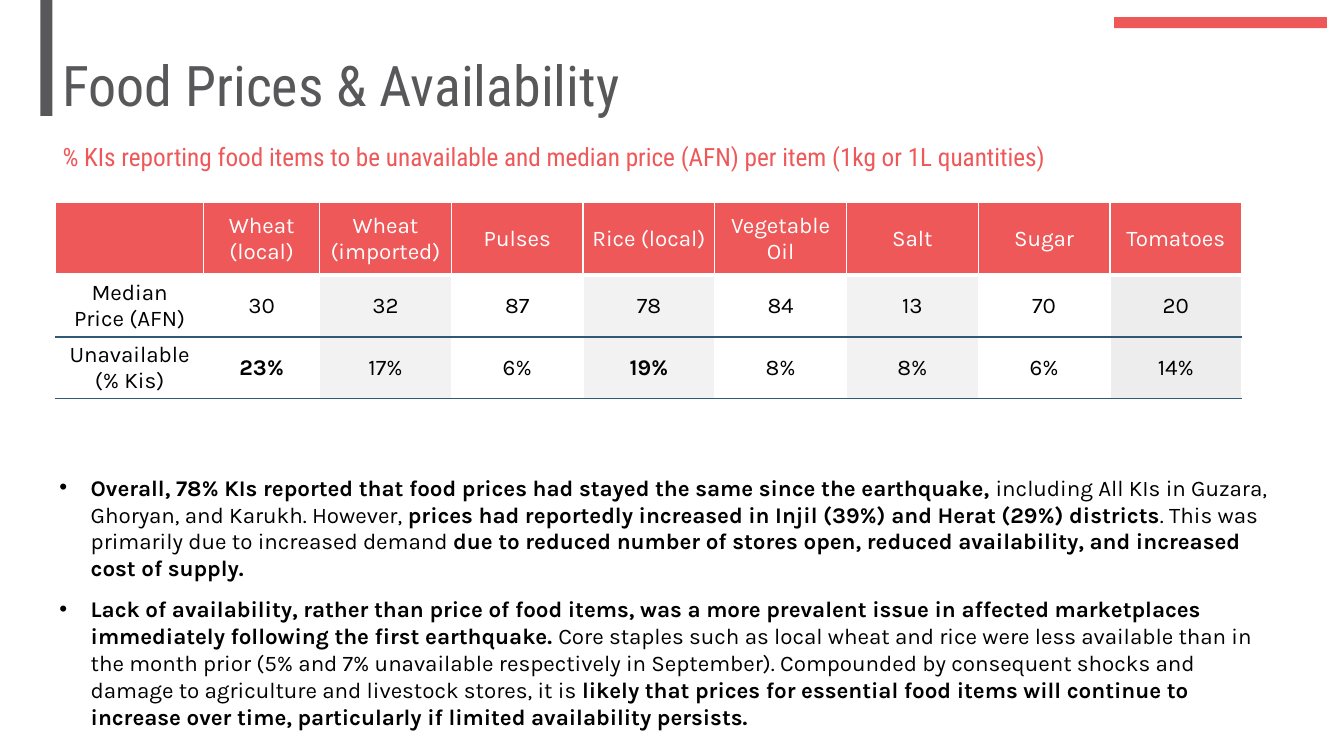
from dataclasses import dataclass

from lxml import etree
from pptx import Presentation
from pptx.dml.color import RGBColor
from pptx.enum.shapes import MSO_SHAPE
from pptx.enum.text import MSO_ANCHOR, PP_ALIGN
from pptx.oxml.ns import qn
from pptx.util import Inches, Pt

RECT = MSO_SHAPE.RECTANGLE
TOP, MIDDLE = MSO_ANCHOR.TOP, MSO_ANCHOR.MIDDLE
LEFT, CENTER = PP_ALIGN.LEFT, PP_ALIGN.CENTER

SLIDE_W, SLIDE_H = Inches(13.33), Inches(7.5)
COLORS = {"red": "EE5859", "gray": "58585A", "black": "000000", "white": "FFFFFF",
          "band": "F2F2F2", "last": "EDEDED", "rule": "315975"}
HEAD_FONT, BODY_FONT = "Roboto Condensed", "Karla"


def px(share: float) -> int:
    """Percent of the slide width."""
    return round(SLIDE_W * share / 100)


def py(share: float) -> int:
    """Percent of the slide height."""
    return round(SLIDE_H * share / 100)


@dataclass(frozen=True)
class Box:
    """Place and size in percent of the slide."""
    x: float
    y: float
    w: float
    h: float

    def emu(self) -> tuple[int, int, int, int]:
        return px(self.x), py(self.y), px(self.w), py(self.h)


@dataclass(frozen=True)
class Bar:
    box: Box
    color: str


@dataclass(frozen=True)
class Run:
    text: str
    bold: bool = False


@dataclass(frozen=True)
class Item:
    name: str
    price: str
    unavailable: str
    bold: bool = False


BARS = [Bar(Box(82.9, 2.27, 15.83, 1.47), "red"), Bar(Box(3, 0, 0.9, 15.33), "gray")]
TITLE_BOX = Box(3.9, 7.2, 63.69, 8.93)
SUBTITLE_BOX = Box(4.13, 18.13, 84.25, 6.53)
TABLE_BOX = Box(4.13, 26.8, 88.26, 25.8)
FINDINGS_BOX = Box(3.9, 62.13, 91.75, 30.67)
ROW_SHARES = [9.6, 8.1, 8.1]

ITEMS = [
    Item("", "Median Price (AFN)", "Unavailable (% Kis)"),
    Item("Wheat (local)", "30", "23%", bold=True),
    Item("Wheat (imported)", "32", "17%"),
    Item("Pulses", "87", "6%"),
    Item("Rice (local)", "78", "19%", bold=True),
    Item("Vegetable Oil", "84", "8%"),
    Item("Salt", "13", "8%"),
    Item("Sugar", "70", "6%"),
    Item("Tomatoes", "20", "14%"),
]
COL_SHARES = [11.03, 8.63] + [9.8] * (len(ITEMS) - 2)

FINDINGS = [
    [Run("Overall, 78% KIs reported that food prices had stayed the same since the earthquake, ", True),
     Run("including All KIs in Guzara, Ghoryan, and Karukh. However, "),
     Run("prices had reportedly increased in Injil (39%) and Herat (29%) districts", True),
     Run(". This was primarily due to increased demand "),
     Run("due to reduced number of stores open, reduced availability, and increased cost of supply.", True)],
    [Run("Lack of availability, rather than price of food items, was a more prevalent issue in affected "
         "marketplaces immediately following the first earthquake. ", True),
     Run("Core staples such as local wheat and rice were less available than in the month prior (5% and 7% "
         "unavailable respectively in September). Compounded by consequent shocks and damage to agriculture "
         "and livestock stores, it is "),
     Run("likely that prices for essential food items will continue to increase over time, particularly if "
         "limited availability persists.", True)],
]


def rgb(name: str) -> RGBColor:
    return RGBColor.from_string(COLORS[name])


def write(tf, paragraphs: list[list[Run]], *, size: float = 16, font: str = BODY_FONT,
          color: str = "black", align=LEFT, before: float = 0, spacing: float = 1.0,
          bullet: bool = False) -> None:
    tf.word_wrap = True
    for i, runs in enumerate(paragraphs):
        p = tf.paragraphs[0] if i == 0 else tf.add_paragraph()
        p.alignment, p.space_before, p.line_spacing = align, Pt(before), spacing
        if bullet:
            pPr = p._p.get_or_add_pPr()
            pPr.set("marL", str(Inches(0.31)))
            pPr.set("indent", str(-Inches(0.31)))
            etree.SubElement(pPr, qn("a:buFont"), typeface="Arial")
            etree.SubElement(pPr, qn("a:buChar"), char="•")
        for run in runs:
            r = p.add_run()
            r.text = run.text
            r.font.name, r.font.size, r.font.bold = font, Pt(size), run.bold
            r.font.color.rgb = rgb(color)


def add_bar(slide, bar: Bar) -> None:
    sp = slide.shapes.add_shape(RECT, *bar.box.emu())
    sp.shadow.inherit = False
    sp.fill.solid()
    sp.fill.fore_color.rgb = rgb(bar.color)
    sp.line.fill.background()


def add_text(slide, box: Box, paragraphs: list[list[Run]], *, anchor=TOP,
             inset: tuple[float, float] = (0.07, 0.04), **fmt) -> None:
    tf = slide.shapes.add_textbox(*box.emu()).text_frame
    tf.vertical_anchor = anchor
    tf.margin_left = tf.margin_right = Inches(inset[0])
    tf.margin_top = tf.margin_bottom = Inches(inset[1])
    write(tf, paragraphs, **fmt)


def set_borders(cell, top: str, bottom: str, bottom_width: float) -> None:
    sides = [("L", "white", 1), ("R", "white", 1), ("T", top, 1), ("B", bottom, bottom_width)]
    tcPr = cell._tc.get_or_add_tcPr()
    for i, (side, color, width) in enumerate(sides):
        ln = etree.Element(qn(f"a:ln{side}"), w=str(Pt(width)))
        fill = etree.SubElement(ln, qn("a:solidFill"))
        etree.SubElement(fill, qn("a:srgbClr"), val=COLORS[color])
        tcPr.insert(i, ln)


def cell_fill(row: int, col: int) -> str:
    if row == 0:
        return "red"
    if col == len(ITEMS) - 1:
        return "last"
    return "band" if col and col % 2 == 0 else "white"


def add_price_table(slide) -> None:
    table = slide.shapes.add_table(len(ROW_SHARES), len(ITEMS), *TABLE_BOX.emu()).table
    table.first_row = table.horz_banding = False
    for row, share in zip(table.rows, ROW_SHARES):
        row.height = py(share)
    for c, (item, share) in enumerate(zip(ITEMS, COL_SHARES)):
        table.columns[c].width = px(share)
        runs = [Run(item.name), Run(item.price), Run(item.unavailable, item.bold)]
        for r, run in enumerate(runs):
            cell = table.cell(r, c)
            cell.vertical_anchor = MIDDLE
            cell.margin_left = cell.margin_right = Inches(0.09)
            cell.margin_top = cell.margin_bottom = Inches(0.04)
            cell.fill.solid()
            cell.fill.fore_color.rgb = rgb(cell_fill(r, c))
            set_borders(cell, "rule" if r == 2 else "white",
                        "rule" if r else "white", 1 if r else 3)
            if run.text:
                write(cell.text_frame, [[run]], align=CENTER, color="black" if r else "white")


def main() -> None:
    prs = Presentation()
    prs.slide_width, prs.slide_height = SLIDE_W, SLIDE_H
    slide = prs.slides.add_slide(prs.slide_layouts[6])

    # Accent bars
    for bar in BARS:
        add_bar(slide, bar)

    # Headings
    add_text(slide, TITLE_BOX, [[Run("Food Prices & Availability")]], anchor=MIDDLE,
             inset=(0.1, 0.05), size=40, font=HEAD_FONT, color="gray", spacing=0.9)
    add_text(slide, SUBTITLE_BOX,
             [[Run("% KIs reporting food items to be unavailable and median price (AFN) "
                   "per item (1kg or 1L quantities)")]],
             size=18, font=HEAD_FONT, color="red", before=10)

    # Prices and findings
    add_price_table(slide)
    add_text(slide, FINDINGS_BOX, FINDINGS, before=10, bullet=True)

    prs.save("out.pptx")


if __name__ == "__main__":
    main()
